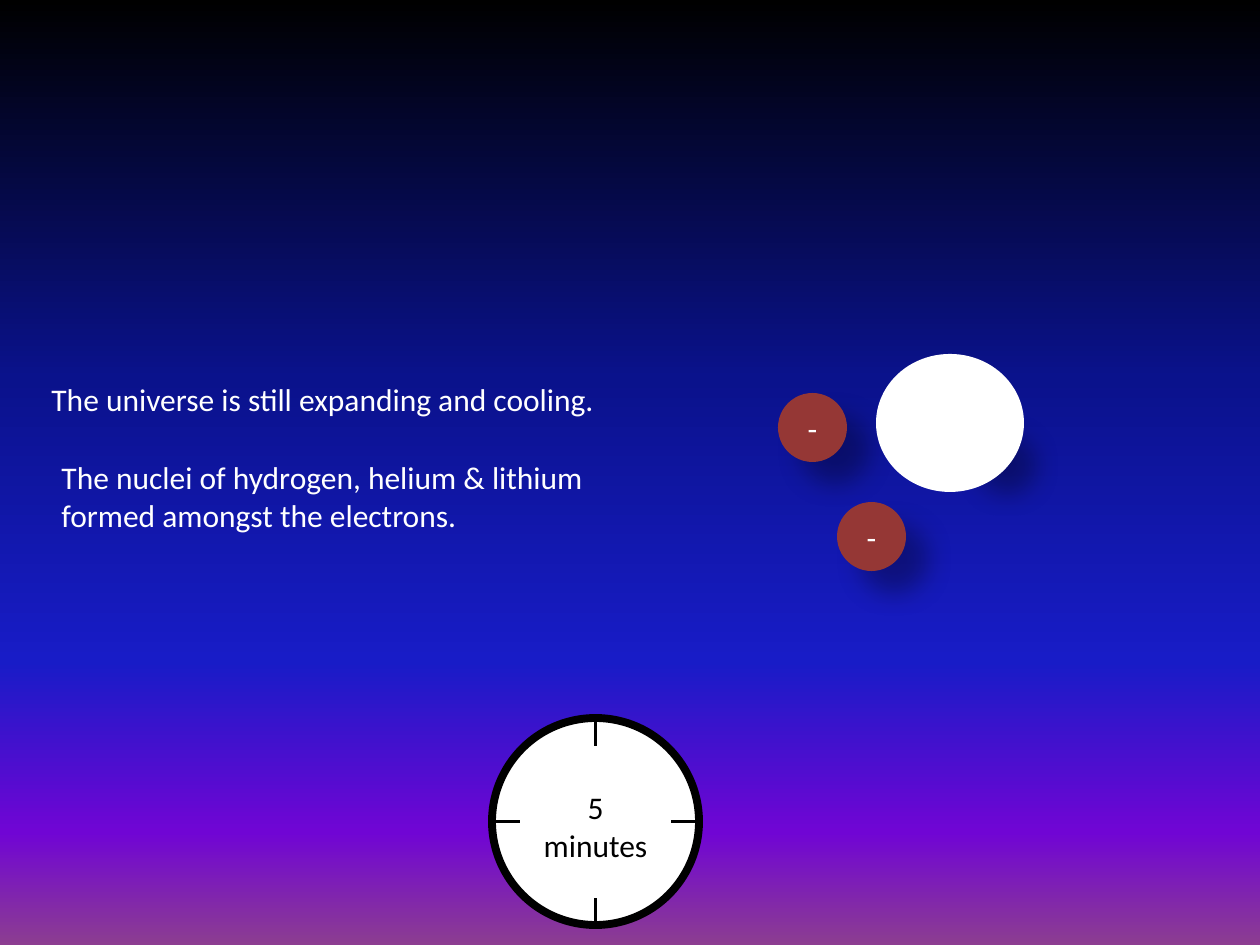
import pptx
import pptx.dml.color
import pptx.enum.shapes
import pptx.enum.text
import pptx.oxml.ns
import pptx.util
from lxml import etree

PX = 914400 / 126
FONT = "Calibri"
COLORS = {
    "white": "FFFFFF",
    "black": "000000",
    "electron": "953735",
    "neutron": "FAC090",
}
SKY = [(0, "000000"), (40, "0A128C"), (70, "181CC7"), (88, "7005D4"), (100, "8C3D91")]
SHAPES = pptx.enum.shapes.MSO_SHAPE
ALIGN = pptx.enum.text.PP_ALIGN


def px(length):
    return pptx.util.Emu(round(length * PX))


def rgb(name):
    return pptx.dml.color.RGBColor.from_string(COLORS[name])


def add_child(parent, tag, **attributes):
    child = etree.SubElement(parent, pptx.oxml.ns.qn(tag))
    for name, value in attributes.items():
        child.set(name, str(value))
    return child


class SlideBuilder:
    def __init__(self, slide):
        self.slide = slide

    def background(self, stops):
        fill = self.slide.background.fill
        fill.gradient()
        fill.gradient_angle = 270
        stop_list = self.slide.element.find(".//" + pptx.oxml.ns.qn("a:gsLst"))
        for stop in list(stop_list):
            stop_list.remove(stop)
        for percent, color in stops:
            stop = add_child(stop_list, "a:gs", pos=percent * 1000)
            add_child(stop, "a:srgbClr", val=color)

    def set_text(self, shape, text, color, align):
        paragraph = shape.text_frame.paragraphs[0]
        paragraph.text = text
        paragraph.alignment = align
        paragraph.font.name = FONT
        paragraph.font.size = pptx.util.Pt(18)
        paragraph.font.color.rgb = rgb(color)

    def shape(self, kind, box, fill, line=None, width=2, text=None, text_color="white"):
        shape = self.slide.shapes.add_shape(kind, *map(px, box))
        shape.shadow.inherit = False
        shape.fill.solid()
        shape.fill.fore_color.rgb = rgb(fill)
        if line:
            shape.line.color.rgb = rgb(line)
            shape.line.width = pptx.util.Pt(width)
        else:
            shape.line.fill.background()
        if text:
            shape.text_frame.vertical_anchor = pptx.enum.text.MSO_ANCHOR.MIDDLE
            self.set_text(shape, text, text_color, ALIGN.CENTER)
        return shape

    def particle(self, left, top, size, fill, text=None):
        shape = self.shape(SHAPES.OVAL, (left, top, size, size), fill, text=text)
        effects = shape.element.spPr.find(pptx.oxml.ns.qn("a:effectLst"))
        shadow = add_child(effects, "a:outerShdw", blurRad=pptx.util.Pt(15),
                           dist=pptx.util.Pt(18), dir=45 * 60000, algn="tl", rotWithShape=0)
        color = add_child(shadow, "a:srgbClr", val=COLORS["black"])
        add_child(color, "a:alpha", val=30000)

    def line(self, *points):
        connector = self.slide.shapes.add_connector(
            pptx.enum.shapes.MSO_CONNECTOR.STRAIGHT, *map(px, points))
        connector.line.color.rgb = rgb("black")
        connector.line.width = pptx.util.Pt(1.5)
        add_child(connector.element.spPr, "a:effectLst")

    def text(self, box, text):
        text_box = self.slide.shapes.add_textbox(*map(px, box))
        text_box.text_frame.word_wrap = True
        text_box.text_frame.auto_size = pptx.enum.text.MSO_AUTO_SIZE.SHAPE_TO_FIT_TEXT
        self.set_text(text_box, text, "white", ALIGN.LEFT)


def main():
    presentation = pptx.Presentation()
    presentation.slide_width, presentation.slide_height = px(1260), px(945)
    builder = SlideBuilder(presentation.slides.add_slide(presentation.slide_layouts[6]))
    builder.background(SKY)

    # Clock: face, crossing lines, and white masks that leave only the ticks
    left, top, size = 492, 718, 207
    middle_x, middle_y = left + size / 2, top + size / 2
    builder.shape(SHAPES.OVAL, (left, top, size, size), "white", "black", 4.5)
    builder.line(middle_x, top, middle_x, top + size)
    builder.line(left, middle_y, left + size, middle_y)
    builder.shape(SHAPES.RECTANGLE, (522, 767, 147, 118), "white", "white",
                  text="5 minutes", text_color="black")
    for mask in [(571, 748, 59, 20), (571, 876, 49, 20)]:
        builder.shape(SHAPES.RECTANGLE, mask, "white", "white")

    # Story
    builder.text((39, 374, 601, 50), "The universe is still expanding and cooling.")
    builder.text((49, 452, 601, 89),
                 "The nuclei of hydrogen, helium & lithium formed amongst the electrons.")

    # Electrons
    for left, top in [(837, 502), (778, 393)]:
        builder.particle(left, top, 69, "electron", "-")

    # Nucleus: the neutron casts its shadow past the white glow
    builder.particle(955, 413, 59, "neutron")
    builder.shape(SHAPES.OVAL, (876, 354, 148, 138), "white")

    presentation.save("out.pptx")


if __name__ == "__main__":
    main()
